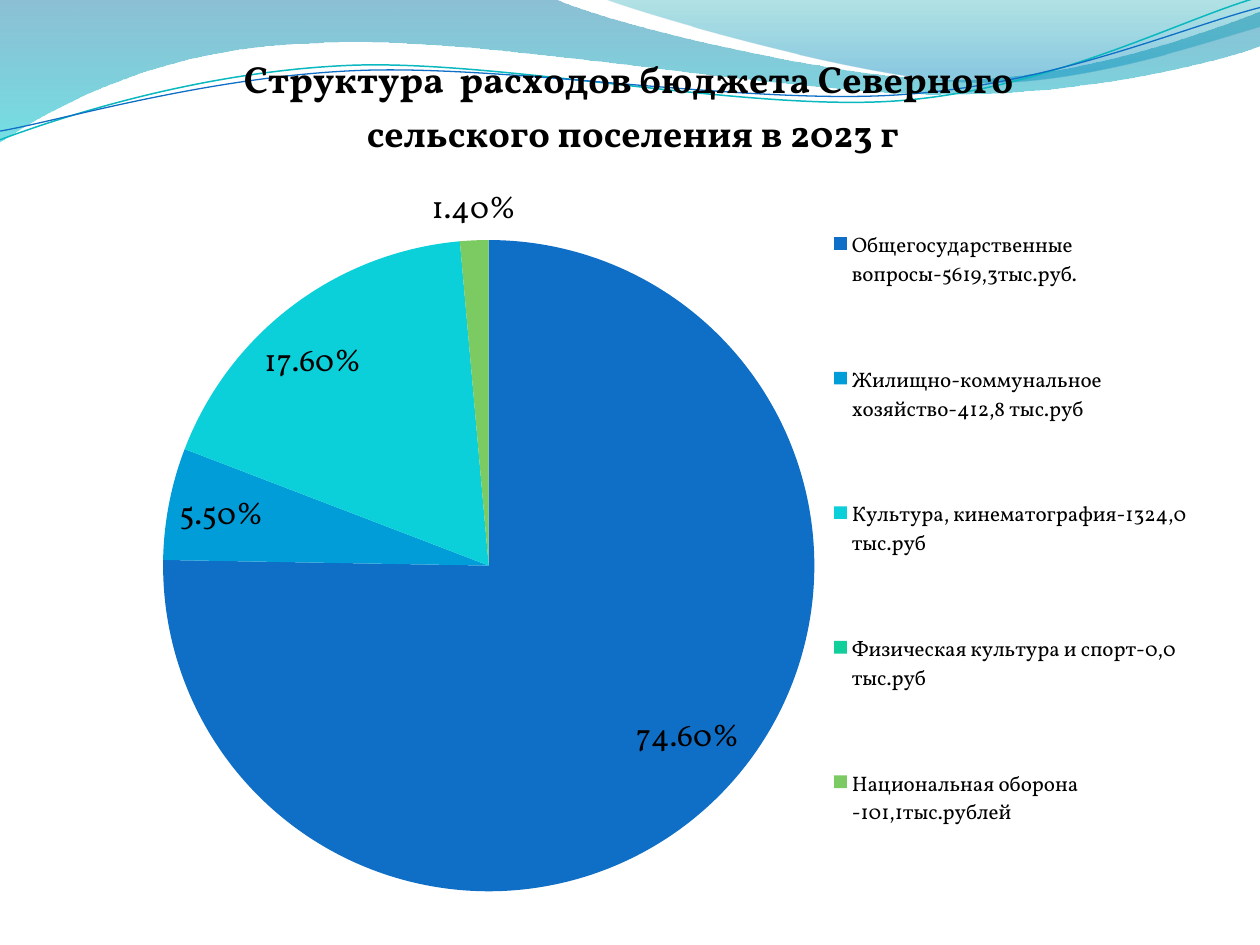
from lxml.etree import SubElement
from pptx import Presentation
from pptx.chart.data import CategoryChartData
from pptx.dml.color import RGBColor
from pptx.enum.chart import XL_CHART_TYPE, XL_LABEL_POSITION, XL_LEGEND_POSITION
from pptx.oxml import parse_xml
from pptx.oxml.ns import nsdecls, qn
from pptx.util import Pt

FONT = "Vollkorn"
TITLE = "Структура  расходов бюджета Северного  сельского поселения в 2023 г"
EXPENSES = [
    ("Общегосударственные вопросы-5619,3тыс.руб.", 0.746, "0F6FC6"),
    ("Жилищно-коммунальное хозяйство-412,8 тыс.руб", 0.055, "009DD9"),
    ("Культура, кинематография-1324,0 тыс.руб", 0.176, "0BD0D9"),
    ("Физическая культура и спорт-0,0 тыс.руб", 0, "10CF9B"),
    ("Национальная оборона -101,1тыс.рублей", 0.014, "7CCA62"),
]
CHART_W, CHART_H = 684, 505

# Outlines in points: a start, then steps of one point (line) or three (curve).
# Gradient stops: position, colour, opacity in percent.
BANDS = [
    ((0, 0), [
        [(316.8, -0.7)],
        [(342.7, 12.2), (478.1, 45.4), (545.8, 45.4)],
        [(614.2, 45.4), (689.8, 18.7), (720, 6.5)],
        [(720.7, 25.9)],
        [(707.8, 31.7), (626.4, 54.7), (537.1, 54)],
        [(447.8, 54), (275, 20.2), (185, 24.5)],
        [(92.9, 25.9), (33.1, 59.8), (-0.7, 81.4)],
    ], [(0, "0074A1", 45), (1, "00C6CF", 55)]),
    ((344.9, -0.7), [
        [(366.5, 7.9), (491, 44.6), (553.7, 46.8)],
        [(616.3, 49.7), (691.9, 23), (720, 15.1)],
        [(720, 0)],
    ], [(0, "00A1A9", 30), (0.8, "008BBF", 45)]),
]
WAVES = [
    ((0, 79.9), [
        [(34.6, 67), (113.8, 41), (199.4, 37.4)],
        [(284.4, 33.8), (427, 64.1), (513.4, 57.6)],
        [(599.8, 51.1), (675.4, 10.8), (718.6, -1.4)],
    ], "0AB8BF", 0.85),
    ((0, 74.9), [
        [(33.8, 69.1), (118.1, 43.9), (203.8, 40.3)],
        [(290.2, 36.7), (429.8, 60.5), (516.2, 54)],
        [(601.9, 48.2), (677.5, 15.1), (720, 4.3)],
    ], "0F6FC6", 0.75),
]


def rgb(hex_colour):
    return RGBColor.from_string(hex_colour)


def add_outline(shapes, start, steps, close):
    """Draw a freeform, turning each three-point step into a Bezier curve."""
    units = 100  # per point
    points = [(x * units, y * units) for step in steps for x, y in step]
    builder = shapes.build_freeform(start[0] * units, start[1] * units,
                                    scale=Pt(1) / units)
    builder.add_line_segments(points, close=close)
    s = builder.convert_to_shape()
    s.shadow.inherit = False
    lines = iter(s._element.xpath(".//a:lnTo"))
    for step in steps:
        group = [next(lines) for _ in step]
        if len(group) == 3:
            group[0].tag = qn("a:cubicBezTo")
            for line in group[1:]:
                group[0].append(line[0])
                line.getparent().remove(line)
    return s


def set_layout(element, x, y, w=None, h=None, inner=False):
    """Place a chart part, in points from the chart's corner."""
    for old in element.findall(qn("c:layout")):
        element.remove(old)
    layout = parse_xml(f"<c:layout {nsdecls('c')}><c:manualLayout/></c:layout>")
    values = [("layoutTarget", "inner")] if inner else []
    values += [("xMode", "edge"), ("yMode", "edge"),
               ("x", x / CHART_W), ("y", y / CHART_H)]
    values += [("w", w / CHART_W), ("h", h / CHART_H)] if w else []
    for tag, value in values:
        SubElement(layout[0], qn(f"c:{tag}")).set("val", str(value))
    before = element.find(qn("c:tx"))
    if before is None:
        before = element.find(qn("c:legendPos"))
    if before is None:
        element.insert(0, layout)
    else:
        before.addnext(layout)


def add_expense_chart(shapes):
    data = CategoryChartData(number_format="0.00%")
    data.categories = [name for name, _, _ in EXPENSES]
    data.add_series("Series 1", [share for _, share, _ in EXPENSES])
    chart = shapes.add_chart(XL_CHART_TYPE.PIE, Pt(20), Pt(15),
                             Pt(CHART_W), Pt(CHART_H), data).chart
    chart.font.name, chart.font.size = FONT, Pt(18)
    chart.font.color.rgb = rgb("000000")

    p = chart.chart_title.text_frame.paragraphs[0]
    p.text = TITLE
    p.font.name, p.font.size, p.font.bold = FONT, Pt(21.6), True
    p.font.color.rgb = rgb("000000")
    chart.chart_title.include_in_layout = False

    chart.has_legend = True
    chart.legend.position = XL_LEGEND_POSITION.RIGHT
    chart.legend.include_in_layout = False
    chart.legend.font.name, chart.legend.font.size = FONT, Pt(12)

    plot = chart.plots[0]
    plot.vary_by_categories = True
    for i, (_, _, colour) in enumerate(EXPENSES):
        fill = plot.series[0].points[i].format.fill
        fill.solid()
        fill.fore_color.rgb = rgb(colour)
    plot.has_data_labels = True
    labels = plot.data_labels
    labels.show_value, labels.show_percentage = True, False
    labels.number_format, labels.number_format_is_linked = "0.00%", False
    labels.position = XL_LABEL_POSITION.BEST_FIT
    labels.font.name, labels.font.size = FONT, Pt(18)
    # A zero share carries no label
    for i, (_, share, _) in enumerate(EXPENSES):
        if not share:
            labels._element.insert(0, parse_xml(
                f'<c:dLbl {nsdecls("c")}><c:idx val="{i}"/><c:delete val="1"/></c:dLbl>'))

    set_layout(chart.chart_title._element, 115.4, 11.1)
    set_layout(chart.legend._element, 444.6, 74.3, 225.7, 428.4)
    plot_area = chart._chartSpace.chart.plotArea
    set_layout(plot_area, 73.2, 122.2, 372.2, 372.2, inner=True)


prs = Presentation()
prs.slide_width, prs.slide_height = Pt(720), Pt(540)
shapes = prs.slides.add_slide(prs.slide_layouts[6]).shapes

for start, steps, stops in BANDS:
    s = add_outline(shapes, start, steps, True)
    s.line.fill.background()
    s.fill.gradient()
    s.fill.gradient_angle = 270
    for stop, (position, colour, _) in zip(s.fill.gradient_stops, stops):
        stop.position, stop.color.rgb = position, rgb(colour)
    for clr, (_, _, opacity) in zip(s._element.xpath(".//a:gs/a:srgbClr"), stops):
        SubElement(clr, qn("a:alpha")).set("val", str(opacity * 1000))

for start, steps, colour, width in WAVES:
    s = add_outline(shapes, start, steps, False)
    s.fill.background()
    s.line.color.rgb, s.line.width = rgb(colour), Pt(width)

add_expense_chart(shapes)
prs.save("out.pptx")
